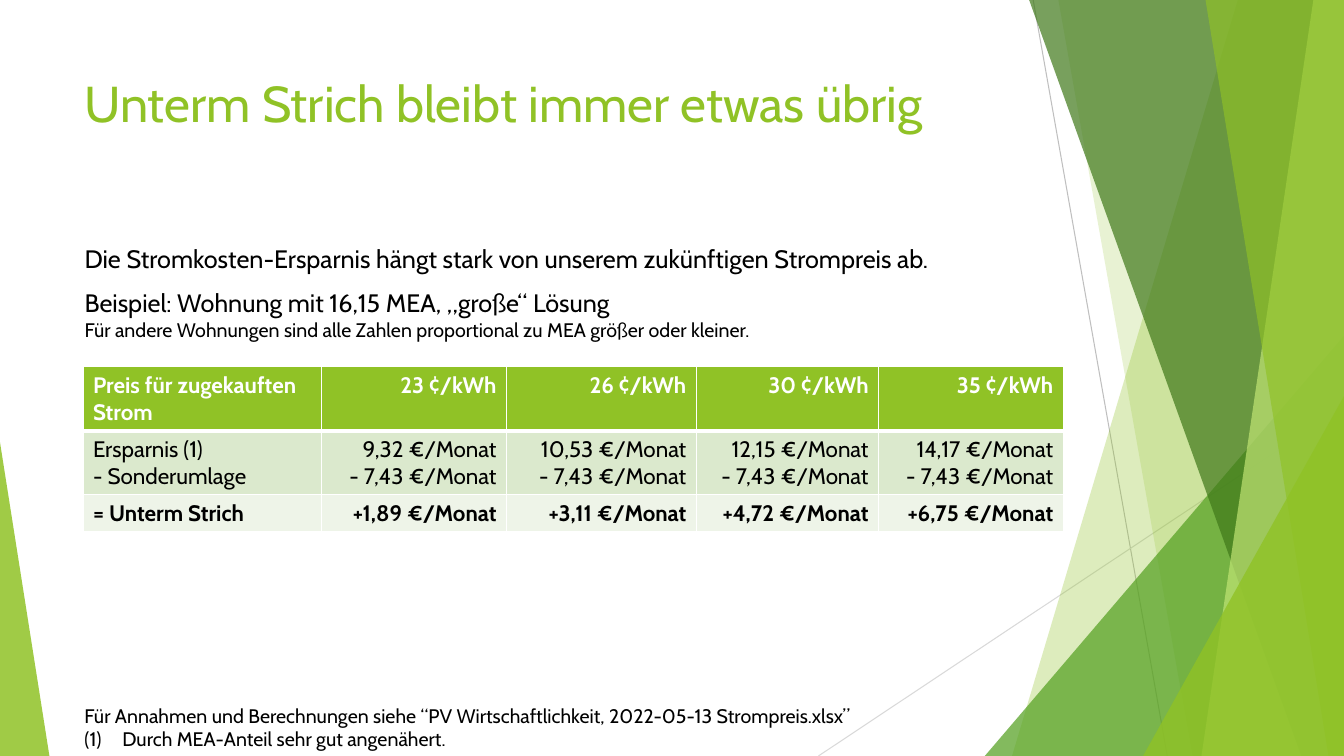
from lxml import etree
from pptx import Presentation, util as u
from pptx.dml.color import RGBColor
from pptx.enum import shapes, text
from pptx.oxml import ns

Pt = u.Pt
FONT = "Cabin"
GREEN, BLACK, WHITE = "90C226", "000000", "FFFFFF"

# Bands run from an x on the top edge to an x on the bottom edge;
# wedges rise from a left x on the bottom edge to a y on the right edge.
PANES = [
    ("band", 884.16, 722.88, GREEN, 30),
    ("band", 756, 851.76, GREEN, 20),
    ("wedge", 703.44, 239.8, "54A021", 72),
    ("band", 735.12, 929.52, "3F7819", 70),
    ("band", 938.16, 858.24, "C0E474", 70),
    ("band", 861.12, 948.96, GREEN, 65),
    ("wedge", 816.5, 283, GREEN, 80),
]
COLS = [170.6, 132, 135.6, 130.2, 131.9]
ROWS = [
    (45, GREEN, WHITE, True, ["Preis für zugekauften Strom", "23 ¢/kWh",
                              "26 ¢/kWh", "30 ¢/kWh", "35 ¢/kWh"]),
    (45.6, "DBE9CD", BLACK, False,
     ["Ersparnis (1)\n- Sonderumlage"]
     + [f"{save} €/Monat\n- 7,43 €/Monat"
        for save in ("9,32", "10,53", "12,15", "14,17")]),
    (26.6, "EEF4E8", BLACK, True,
     ["= Unterm Strich"]
     + [f"+{net} €/Monat" for net in ("1,89", "3,11", "4,72", "6,75")]),
]


def rgb(code):
    return RGBColor.from_string(code)


def sub(node, tag, **attrs):
    return etree.SubElement(node, ns.qn(tag), attrs)


def paint(shape, code, alpha):
    """Fill without outline, at an opacity in percent."""
    shape.shadow.inherit = False
    shape.line.fill.background()
    shape.fill.solid()
    shape.fill.fore_color.rgb = rgb(code)
    tint = shape.fill._xPr.find(".//" + ns.qn("a:srgbClr"))
    sub(tint, "a:alpha", val=str(alpha * 1000))


def style(para, size, code, bold=False):
    font = para.font
    font.name, font.size, font.bold = FONT, Pt(size), bold
    font.color.rgb = rgb(code)


def rule(slide, x1, y1, x2, y2, code):
    line = slide.shapes.add_connector(
        shapes.MSO_CONNECTOR.STRAIGHT, Pt(x1), Pt(y1), Pt(x2), Pt(y2))
    line.line.color.rgb = rgb(code)
    line.line.width = Pt(0.75)
    sub(line._element.spPr, "a:effectLst")


def wedge(slide, x, y, w, h, apex, code, alpha):
    shape = slide.shapes.add_shape(
        shapes.MSO_SHAPE.ISOSCELES_TRIANGLE, Pt(x), Pt(y), Pt(w), Pt(h))
    shape.adjustments[0] = apex
    paint(shape, code, alpha)


def band(slide, top, low, right, y, base, code, alpha):
    pts = [(Pt(a), Pt(b)) for a, b in
           [(top, y), (right, y), (right, base), (low, base)]]
    form = slide.shapes.build_freeform(*pts[0])
    form.add_line_segments(pts[1:], close=True)
    paint(form.convert_to_shape(), code, alpha)


def decor(slide, x, y, w, h):
    """Green facets on both sides of the slide."""
    right, base = x + w, y + h
    rule(slide, x + 738, y, x + 833.8, base, "BFBFBF")
    rule(slide, right, y + 290.2, x + 584.6, base, "D9D9D9")
    for kind, a, b, code, alpha in PANES:
        if kind == "band":
            band(slide, x + a, x + b, right, y, base, code, alpha)
        else:
            wedge(slide, x + a, y + b, w - a, h - b, 1, code, alpha)
    wedge(slide, x, y + 316, 35.3, h - 316, 0, GREEN, 85)


def block(slide, x, y, w, h):
    frame = slide.shapes.add_textbox(Pt(x), Pt(y), Pt(w), Pt(h)).text_frame
    frame.word_wrap = True
    return frame


def title(slide, x, y, w, h):
    para = block(slide, x, y, w, h).paragraphs[0]
    para.text = "Unterm Strich bleibt immer etwas übrig"
    style(para, 36, GREEN)


def intro(slide, x, y, w, h):
    frame = block(slide, x, y, w, h)
    first, second = frame.paragraphs[0], frame.add_paragraph()
    first.text = ("Die Stromkosten-Ersparnis hängt stark von unserem "
                  "zukünftigen Strompreis ab.")
    second.text = "Beispiel: Wohnung mit 16,15 MEA, „große“ Lösung\v"
    note = second.add_run()
    note.text = ("Für andere Wohnungen sind alle Zahlen proportional "
                 "zu MEA größer oder kleiner.")
    for para in (first, second):
        para.space_before = Pt(10)
        style(para, 18, BLACK)
    note.font.size = Pt(14)


def notes(slide, x, y, w, h):
    frame = block(slide, x, y, w, h)
    first, second = frame.paragraphs[0], frame.add_paragraph()
    first.text = ("Für Annahmen und Berechnungen siehe “PV "
                  "Wirtschaftlichkeit, 2022-05-13 Strompreis.xlsx”")
    second.text = "Durch MEA-Anteil sehr gut angenähert."
    for para in (first, second):
        style(para, 14, BLACK)
    props = second._p.get_or_add_pPr()
    props.set("marL", str(Pt(27)))
    props.set("indent", str(-Pt(27)))
    mark = props.makeelement(ns.qn("a:buAutoNum"), {"type": "arabicParenBoth"})
    props.insert(0, mark)


def edge(cell, low):
    """White cell borders; low is the width of the bottom one."""
    props = cell._tc.get_or_add_tcPr()
    for spot, (side, width) in enumerate(
            [("L", 1), ("R", 1), ("T", 1), ("B", low)]):
        line = props.makeelement(ns.qn("a:ln" + side), {"w": str(Pt(width))})
        sub(sub(line, "a:solidFill"), "a:srgbClr", val=WHITE)
        props.insert(spot, line)


def prices(slide, x, y):
    high = sum(row[0] for row in ROWS)
    grid = slide.shapes.add_table(
        len(ROWS), len(COLS), Pt(x), Pt(y), Pt(sum(COLS)), Pt(high)).table
    for col, wide in zip(grid.columns, COLS):
        col.width = Pt(wide)
    for r, (tall, fill, ink, bold, words) in enumerate(ROWS):
        grid.rows[r].height = Pt(tall)
        for c, word in enumerate(words):
            cell = grid.cell(r, c)
            cell.text = word
            cell.fill.solid()
            cell.fill.fore_color.rgb = rgb(fill)
            edge(cell, 1 if r else 3)
            for para in cell.text_frame.paragraphs:
                style(para, 16, ink, bold)
                if c:
                    para.alignment = text.PP_ALIGN.RIGHT


def main():
    deck = Presentation()
    deck.slide_width, deck.slide_height = Pt(960), Pt(540)
    slide = deck.slides.add_slide(deck.slide_layouts[6])
    decor(slide, 0, 0, 960, 540)
    title(slide, 53.3, 48, 677, 104)
    intro(slide, 53.3, 170, 713.5, 273)
    notes(slide, 53.3, 499, 596, 41)
    prices(slide, 59.3, 262)
    deck.save("out.pptx")


if __name__ == "__main__":
    main()
